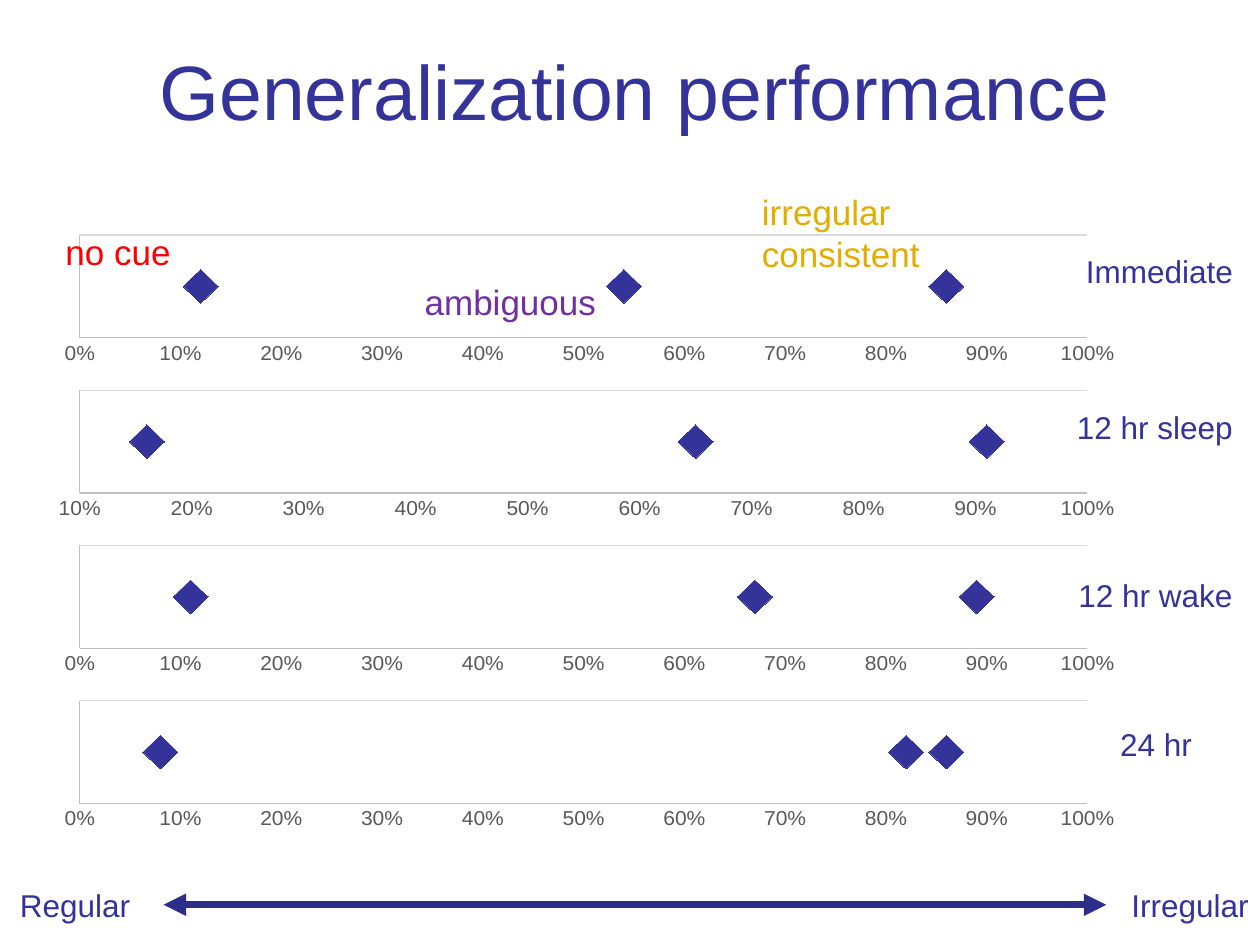
from lxml import etree
from pptx import Presentation
from pptx.chart.data import XyChartData
from pptx.dml.color import RGBColor
from pptx.enum.chart import XL_CHART_TYPE, XL_MARKER_STYLE, XL_TICK_LABEL_POSITION, XL_TICK_MARK
from pptx.enum.shapes import MSO_CONNECTOR
from pptx.enum.text import MSO_ANCHOR, MSO_AUTO_SIZE, PP_ALIGN
from pptx.oxml.ns import qn
from pptx.util import Cm, Pt

SCATTER = XL_CHART_TYPE.XY_SCATTER
DIAMOND = XL_MARKER_STYLE.DIAMOND
NO_LABELS = XL_TICK_LABEL_POSITION.NONE
NO_TICK = XL_TICK_MARK.NONE
STRAIGHT = MSO_CONNECTOR.STRAIGHT
MIDDLE = MSO_ANCHOR.MIDDLE
CENTER = PP_ALIGN.CENTER
NO_AUTOSIZE = MSO_AUTO_SIZE.NONE

FONT = "Arial"
NAVY, RED, GOLD, PURPLE = "333399", "FF0000", "E2AC00", "7030A0"
AXIS_LINE, GRID_LINE, AXIS_TEXT, ARROW = "BFBFBF", "D9D9D9", "595959", "2D2D8A"

TITLE = "Generalization performance"
CONDITIONS = [
    {"shares": (0.12, 0.86, 0.54), "start": 0},
    {"shares": (0.16, 0.91, 0.65), "start": 0.1},
    {"shares": (0.11, 0.89, 0.67), "start": 0},
    {"shares": (0.08, 0.86, 0.82), "start": 0},
]
LABELS = [
    ("Immediate", 21.64, 4.95, 3.51),
    ("12 hr sleep", 21.46, 8.1, 3.68),
    ("12 hr wake", 21.49, 11.48, 3.66),
    ("24 hr", 22.33, 14.5, 1.98),
    ("Regular", 0.15, 17.73, 2.77),
    ("Irregular", 22.56, 17.73, 2.9),
]
CUES = [
    ("irregular consistent", 15.11, 3.71, 3.81, 2.74, GOLD),
    ("ambiguous", 8.31, 5.54, 4.09, 1.88, PURPLE),
    ("no cue", 1.07, 4.52, 2.9, 1.12, RED),
]
CHART_LEFT, CHART_TOP, CHART_STEP = 1.09, 4.52, 3.13
CHART_WIDTH, CHART_HEIGHT = 21.59, 2.82
PLOT_AREA = {"x": 0.024, "y": 0.08, "w": 0.941, "h": 0.765}
ARROW_START, ARROW_END, ARROW_Y = 3.3, 22.3, 18.24


def color(value):
    """Turn a hex string into a colour."""
    return RGBColor.from_string(value)


def style_font(font, size, value):
    """Give a font the slide's typeface, a size and a colour."""
    font.name = FONT
    font.size = Pt(size)
    font.color.rgb = color(value)


def style_line(line, value, width):
    """Give a line a colour and a width."""
    line.color.rgb = color(value)
    line.width = Pt(width)


def style_marker(marker, value):
    """Make a marker a large solid diamond."""
    marker.style = DIAMOND
    marker.size = 20
    marker.format.fill.solid()
    marker.format.fill.fore_color.rgb = color(value)
    marker.format.line.fill.background()


def style_axis(axis, start, end, step):
    """Set the scale, line and font of an axis."""
    axis.minimum_scale, axis.maximum_scale, axis.major_unit = start, end, step
    axis.major_tick_mark = axis.minor_tick_mark = NO_TICK
    style_line(axis.format.line, AXIS_LINE, 0.75)
    style_font(axis.tick_labels.font, 12, AXIS_TEXT)


def set_plot_area(chart):
    """Fix the inner plot area as fractions of the chart."""
    plot_area = chart.plots[0]._element.getparent()
    for old in plot_area.findall(qn("c:layout")):
        plot_area.remove(old)
    layout = etree.Element(qn("c:layout"))
    plot_area.insert(0, layout)
    manual = etree.SubElement(layout, qn("c:manualLayout"))
    settings = [("layoutTarget", "inner"), ("xMode", "edge"), ("yMode", "edge")]
    for name, value in settings + list(PLOT_AREA.items()):
        etree.SubElement(manual, qn(f"c:{name}")).set("val", str(value))


def add_strip(slide, top, shares, start):
    """Add one scatter strip with the no-cue point in red."""
    data = XyChartData()
    points = data.add_series("Series 1")
    for share in shares:
        points.add_data_point(share, 100)
    frame = slide.shapes.add_chart(
        SCATTER, Cm(CHART_LEFT), Cm(top), Cm(CHART_WIDTH), Cm(CHART_HEIGHT), data)
    chart = frame.chart
    chart.has_title = chart.has_legend = False
    style_font(chart.font, 10, "000000")
    chart.plots[0].vary_by_categories = False
    across, upright = chart.category_axis, chart.value_axis
    style_axis(across, start, 1, 0.1)
    across.has_major_gridlines = False
    across.tick_labels.number_format = "0%"
    across.tick_labels.number_format_is_linked = False
    style_axis(upright, 0, 200, 200)
    upright.tick_label_position = NO_LABELS
    upright.has_major_gridlines = True
    style_line(upright.major_gridlines.format.line, GRID_LINE, 0.75)
    series = chart.plots[0].series[0]
    series.smooth = False
    series.format.line.fill.background()
    style_marker(series.marker, NAVY)
    no_cue = series.points[0]
    no_cue.format.line.fill.background()
    style_marker(no_cue.marker, RED)
    set_plot_area(chart)


def add_text(slide, text, left, top, width, height, size, value, wrap):
    """Add a one-paragraph text box."""
    box = slide.shapes.add_textbox(Cm(left), Cm(top), Cm(width), Cm(height))
    box.text_frame.word_wrap = wrap
    box.text_frame.text = text
    style_font(box.text_frame.paragraphs[0].runs[0].font, size, value)


def add_title(slide):
    """Place and format the title."""
    title = slide.shapes.title
    title.left, title.top, title.width, title.height = Cm(2), Cm(1.04), Cm(21.6), Cm(1.52)
    frame = title.text_frame
    frame.text = TITLE
    frame.auto_size = NO_AUTOSIZE
    frame.vertical_anchor = MIDDLE
    para = frame.paragraphs[0]
    para.alignment = CENTER
    style_font(para.runs[0].font, 44, NAVY)


def add_arrow(slide):
    """Add the double-headed arrow from regular to irregular."""
    arrow = slide.shapes.add_connector(
        STRAIGHT, Cm(ARROW_START), Cm(ARROW_Y), Cm(ARROW_END), Cm(ARROW_Y))
    style_line(arrow.line, ARROW, 4.25)
    properties = arrow._element.spPr
    outline = properties.find(qn("a:ln"))
    for end in ("headEnd", "tailEnd"):
        etree.SubElement(outline, qn(f"a:{end}")).set("type", "triangle")
    etree.SubElement(properties, qn("a:effectLst"))


def main():
    """Build and save the slide."""
    deck = Presentation()
    deck.slide_width, deck.slide_height = Cm(25.4), Cm(19.05)
    slide = deck.slides.add_slide(deck.slide_layouts[5])
    add_title(slide)
    for index, condition in enumerate(CONDITIONS):
        add_strip(slide, CHART_TOP + index * CHART_STEP, **condition)
    for text, left, top, width in LABELS:
        add_text(slide, text, left, top, width, 1.02, 18, NAVY, False)
    add_arrow(slide)
    for text, left, top, width, height, value in CUES:
        add_text(slide, text, left, top, width, height, 20, value, True)
    deck.save("out.pptx")


if __name__ == "__main__":
    main()
